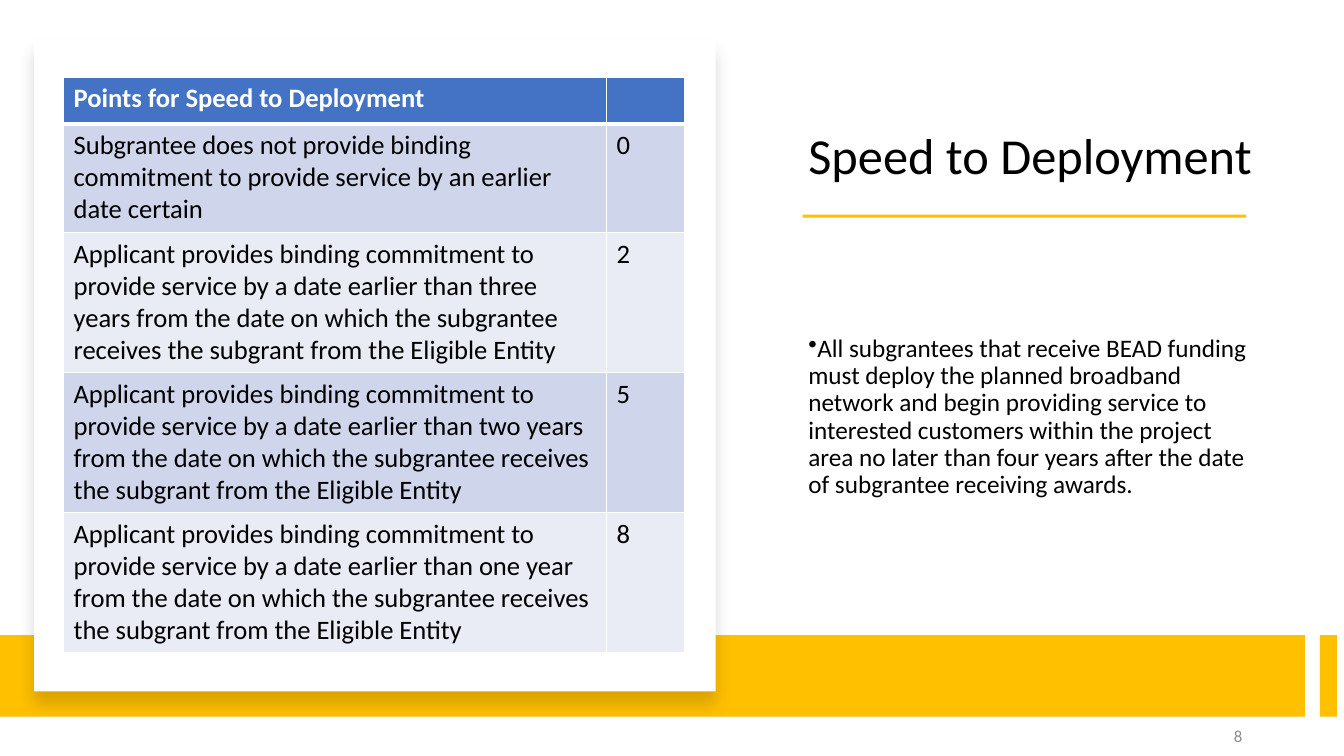
"""Build the Speed to Deployment slide with its points table."""
from lxml.etree import SubElement
from pptx import Presentation
from pptx.dml.color import RGBColor
from pptx.enum.shapes import MSO_SHAPE as Shape
from pptx.enum.text import MSO_ANCHOR as Anchor, PP_ALIGN as Align
from pptx.oxml import parse_xml
from pptx.oxml.ns import nsdecls, qn
from pptx.util import Inches, Pt

COLORS = {"gold": "FFC000", "white": "FFFFFF", "black": "000000", "gray": "8C8C8C",
          "header": "4472C4", "odd": "CFD5EA", "even": "E9EBF5"}

deck = Presentation()
deck.slide_width, deck.slide_height = Inches(13.33), Inches(7.5)
col, row = deck.slide_width / 100, deck.slide_height / 100
slide = deck.slides.add_slide(deck.slide_layouts[6])


def add_block(x, y, width, height, color):
    block = slide.shapes.add_shape(Shape.RECTANGLE, int(x * col), int(y * row),
                                   int(width * col), int(height * row))
    block.shadow.inherit = False
    block.fill.solid()
    block.fill.fore_color.rgb = RGBColor.from_string(COLORS[color])
    block.line.fill.background()
    return block


def write(frame, text, size, color, bold=False):
    frame.word_wrap = True
    paragraph = frame.paragraphs[0]
    paragraph.text = text
    paragraph.font.name = "Calibri"
    paragraph.font.size = Pt(size)
    paragraph.font.bold = bold
    paragraph.font.color.rgb = RGBColor.from_string(COLORS[color])
    return paragraph


add_block(0, 84, 97.1, 10.8, "gold")
card = add_block(2.55, 5.2, 50.7, 86.27, "white")
add_block(59.72, 28.4, 33, 0.4, "gold")
add_block(98.2, 84, 1.28, 10.8, "gold")

effects = card._element.spPr.find(qn("a:effectLst"))
effects.append(parse_xml(
    f'<a:outerShdw {nsdecls("a")} blurRad="{Pt(11)}" dist="{Pt(10)}" dir="5400000" '
    f'algn="t" rotWithShape="0"><a:srgbClr val="{COLORS["black"]}">'
    '<a:alpha val="15000"/></a:srgbClr></a:outerShdw>'))

texts = [
    ("Speed to Deployment", 36, "black", (59.41, 7.73, 35.11, 17.47), Anchor.BOTTOM),
    ("All subgrantees that receive BEAD funding must deploy the planned broadband network "
     "and begin providing service to interested customers within the project area no later "
     "than four years after the date of subgrantee receiving awards.",
     18, "black", (59.41, 29.6, 35.11, 51.2), Anchor.MIDDLE),
    ("8", 12, "gray", (70.67, 94.67, 22.5, 5.33), Anchor.MIDDLE),
]
written = []
for text, size, color, (x, y, width, height), anchor in texts:
    frame = slide.shapes.add_textbox(int(x * col), int(y * row),
                                     int(width * col), int(height * row)).text_frame
    frame.vertical_anchor = anchor
    written.append(write(frame, text, size, color))
title, body, page_number = written
title.line_spacing = body.line_spacing = 0.9
body.space_before = Pt(10)
body_format = body._p.get_or_add_pPr()
body_format.set("marL", "0")
body_format.set("indent", str(-Inches(0.25)))
bullet = body_format.makeelement(qn("a:buChar"), {"char": "•"})
body_format.find(qn("a:defRPr")).addprevious(bullet)
page_number.alignment = Align.RIGHT
page_number.space_after = Pt(6)

commitment = ("Applicant provides binding commitment to provide service by a date earlier than "
              "{} from the date on which the subgrantee receives the subgrant "
              "from the Eligible Entity")
points = [
    ("Points for Speed to Deployment", ""),
    ("Subgrantee does not provide binding commitment to provide service "
     "by an earlier date certain", "0"),
    (commitment.format("three years"), "2"),
    (commitment.format("two years"), "5"),
    (commitment.format("one year"), "8"),
]
widths = [40.4, 5.78]
heights = [6.13, 14.4, 18.53, 18.53, 18.53]
table = slide.shapes.add_table(len(points), len(widths), int(4.73 * col), int(10.27 * row),
                               int(sum(widths) * col), int(sum(heights) * row)).table
for column, width in zip(table.columns, widths):
    column.width = int(width * col)
for r, (entries, height) in enumerate(zip(points, heights)):
    table.rows[r].height = int(height * row)
    is_header = r == 0
    fill = "header" if is_header else "odd" if r % 2 else "even"
    for c, entry in enumerate(entries):
        cell = table.cell(r, c)
        write(cell.text_frame, entry, 19, "white" if is_header else "black", is_header)
        borders = cell._tc.get_or_add_tcPr()
        for side in ("lnL", "lnR", "lnT", "lnB"):
            thick = (is_header and side == "lnB") or (r == 1 and side == "lnT")
            line = SubElement(borders, qn(f"a:{side}"), w=str(Pt(3 if thick else 1)))
            SubElement(SubElement(line, qn("a:solidFill")), qn("a:srgbClr"), val=COLORS["white"])
        cell.fill.solid()
        cell.fill.fore_color.rgb = RGBColor.from_string(COLORS[fill])

deck.save("out.pptx")
